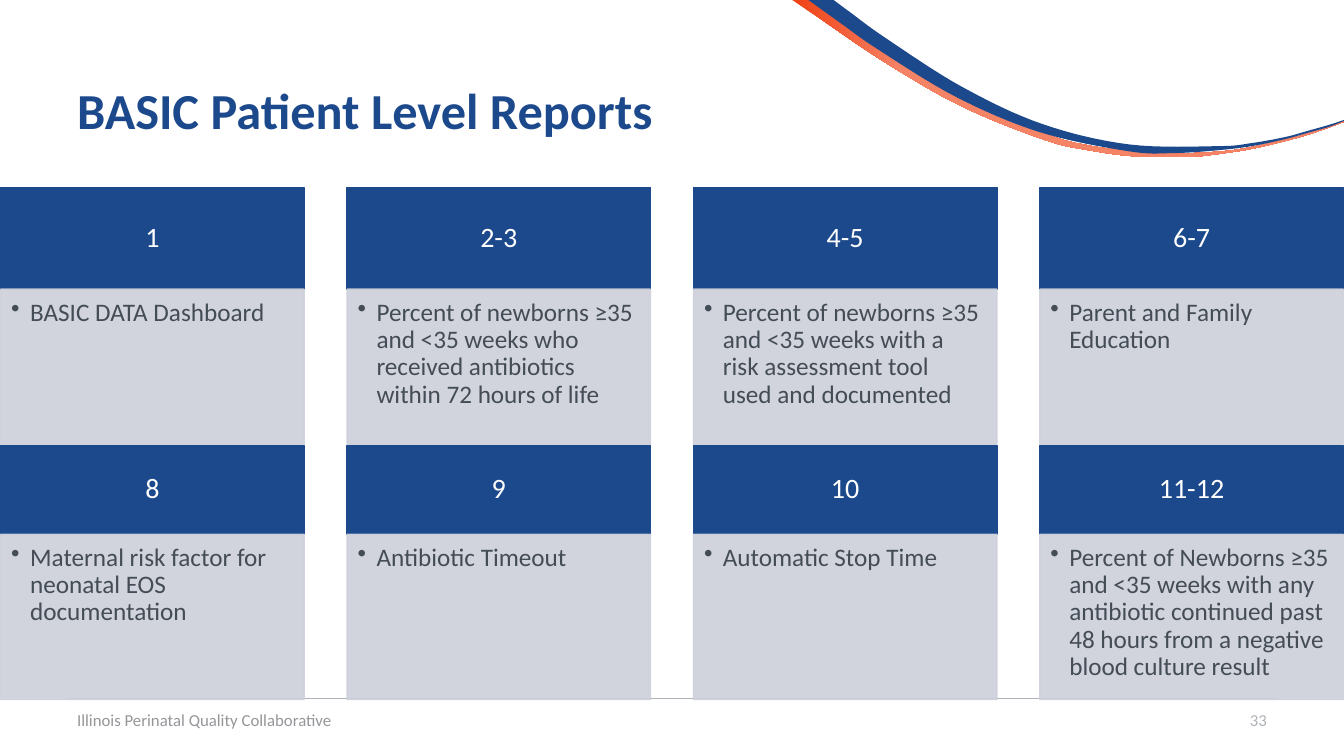
"""Build the slide of BASIC patient level reports."""
from lxml import etree
from pptx import Presentation
from pptx.dml.color import RGBColor
from pptx.enum.shapes import MSO_CONNECTOR, MSO_SHAPE
from pptx.enum.text import MSO_ANCHOR, PP_ALIGN
from pptx.oxml.ns import qn
from pptx.util import Pt

RECT = MSO_SHAPE.RECTANGLE
LINE = MSO_CONNECTOR.STRAIGHT
TOP, MID = MSO_ANCHOR.TOP, MSO_ANCHOR.MIDDLE
LEFT, CENTER, RIGHT = PP_ALIGN.LEFT, PP_ALIGN.CENTER, PP_ALIGN.RIGHT

NAVY = RGBColor(0x1C, 0x49, 0x8B)
WHITE = RGBColor(0xFF, 0xFF, 0xFF)
PALE = RGBColor(0xCD, 0xD0, 0xDA)
SLATE = RGBColor(0x44, 0x4C, 0x55)
GRAY = RGBColor(0x94, 0x96, 0x99)
SILVER = RGBColor(0xAF, 0xB3, 0xB9)
RED = RGBColor(0xF0, 0x41, 0x15)
CORAL = RGBColor(0xF5, 0x83, 0x66)

WIDE, HIGH = 960, 540
FONT = "Calibri"

ORANGE_TOP = [
    (579.6, 0), (583, 3), (635, 39), (690, 71), (748, 96), (778, 104),
    (810, 108), (841, 109.5), (868, 108.5), (889, 106), (919, 99.5),
    (935, 95), (960, 86.4)]
ORANGE_LOW = [
    (960, 87.1), (935, 96), (911, 102.5), (889, 107.3), (857.5, 111.6),
    (841.7, 112.3), (809.3, 111.6), (777.6, 107.3), (746.6, 100.1),
    (687.6, 76.3), (632.2, 44.6), (578.9, 8.6), (565.9, 0)]
BLUE_TOP = [
    (595.4, 0), (607, 8.6), (632.9, 27.4), (686.9, 61.9), (744.5, 88.6),
    (806.7, 103.2), (870.5, 104.4), (894.2, 102.2), (918, 97.9),
    (933.8, 93.6), (949, 89.3), (960, 85.7)]
BLUE_LOW = [
    (960, 86.4), (949, 90.7), (933.8, 95), (918, 99.4), (894.2, 104.4),
    (870.5, 107.3), (838, 109.4), (805.7, 108), (742.3, 94.3),
    (682.6, 69.1), (627.1, 35.3), (600.5, 16.6), (577.4, 0)]

ROWS = [
    (133.9, 72.7, 110.9, [
        ("1", "BASIC DATA Dashboard"),
        ("2-3", "Percent of newborns ≥35 and <35 weeks who received "
                "antibiotics within 72 hours of life"),
        ("4-5", "Percent of newborns ≥35 and <35 weeks with a risk "
                "assessment tool used and documented"),
        ("6-7", "Parent and Family Education")]),
    (318.2, 63.4, 118.1, [
        ("8", "Maternal risk factor for neonatal EOS documentation"),
        ("9", "Antibiotic Timeout"),
        ("10", "Automatic Stop Time"),
        ("11-12", "Percent of Newborns ≥35 and <35 weeks with any antibiotic "
                  "continued past 48 hours from a negative blood culture "
                  "result")]),
]


def smooth(knots, steps=8):
    """Return points on a Catmull-Rom curve through the knots."""
    pads = [knots[0], *knots, knots[-1]]
    dots = [knots[0]]
    for a, b, c, d in zip(pads, pads[1:], pads[2:], pads[3:]):
        for i in range(1, steps + 1):
            t = i / steps
            dots.append(tuple(
                q + t / 2 * (r - p + t * (2 * p - 5 * q + 4 * r - s
                                          + t * (3 * (q - r) + s - p)))
                for p, q, r, s in zip(a, b, c, d)))
    return dots


def add_band(slide, left, top, upper, lower):
    """Draw a closed band between two curved edges."""
    dots = [(Pt(left + x), Pt(top + y))
            for x, y in smooth(upper) + smooth(lower)]
    pen = slide.shapes.build_freeform(*dots[0])
    pen.add_line_segments(dots[1:], close=True)
    band = pen.convert_to_shape()
    band.shadow.inherit = False
    band.line.fill.background()
    return band


def add_swoosh(slide, left, top):
    """Draw the orange and blue bands in the corner."""
    fill = add_band(slide, left, top, ORANGE_TOP, ORANGE_LOW).fill
    fill.gradient()
    fill.gradient_angle = 0
    for stop, color, pos in zip(fill.gradient_stops, (RED, CORAL), (0, 0.2)):
        stop.color.rgb = color
        stop.position = pos
    fill = add_band(slide, left, top, BLUE_TOP, BLUE_LOW).fill
    fill.solid()
    fill.fore_color.rgb = NAVY


def write(shape, text, size, color, align=LEFT, anchor=MID,
          inset=(7.2, 3.6, 7.2, 3.6), bold=False, bullet=False):
    """Set one styled paragraph in a shape."""
    frame = shape.text_frame
    frame.word_wrap = True
    frame.vertical_anchor = anchor
    (frame.margin_left, frame.margin_top,
     frame.margin_right, frame.margin_bottom) = map(Pt, inset)
    para = frame.paragraphs[0]
    para.alignment = align
    para.line_spacing = 0.9
    if bullet:
        props = para._p.get_or_add_pPr()
        props.set("marL", str(Pt(13.5)))
        props.set("indent", str(-Pt(13.5)))
        etree.SubElement(props, qn("a:buChar")).set("char", "•")
    run = para.add_run()
    run.text = text
    font = run.font
    font.name, font.size, font.bold = FONT, Pt(size), bold
    font.color.rgb = color


def add_label(slide, box, text, size, color, **style):
    """Place a plain line of text in a box."""
    label = slide.shapes.add_textbox(*map(Pt, box))
    write(label, text, size, color, **style)


def add_panel(slide, box, color, alpha=100):
    """Draw a filled and outlined rectangle."""
    panel = slide.shapes.add_shape(RECT, *map(Pt, box))
    panel.shadow.inherit = False
    panel.line.width = Pt(1)
    for fill in (panel.fill, panel.line.fill):
        fill.solid()
        fill.fore_color.rgb = color
    if alpha < 100:
        for tint in panel._element.spPr.iter(qn("a:srgbClr")):
            etree.SubElement(tint, qn("a:alpha")).set("val", str(alpha * 1000))
    return panel


def add_card(slide, left, top, width, head, body, title, text):
    """Stack a numbered header on its description."""
    panel = add_panel(slide, (left, top, width, head), NAVY)
    write(panel, title, 20, WHITE, CENTER, inset=(11.5, 6.5, 11.5, 6.5))
    panel = add_panel(slide, (left, top + head, width, body), PALE, 90)
    write(panel, text, 18, SLATE, anchor=TOP,
          inset=(7.5, 7.5, 10, 11.5), bullet=True)


def add_grid(slide, left, width, card):
    """Spread the rows of cards evenly over the width."""
    for top, head, body, cards in ROWS:
        step = (width - card) / (len(cards) - 1)
        for i, (title, text) in enumerate(cards):
            add_card(slide, left + i * step, top, card, head, body,
                     title, text)


def add_rule(slide, left, top, width):
    """Draw the thin line above the footer."""
    rule = slide.shapes.add_connector(
        LINE, Pt(left), Pt(top), Pt(left + width), Pt(top))
    rule.line.color.rgb = SILVER
    rule.line.width = Pt(0.5)
    etree.SubElement(rule._element.spPr, qn("a:effectLst"))


def add_footer(slide, left, top, width, height):
    """Place the page number and the group name."""
    add_label(slide, (left + width - 216, top, 216, height), "33", 12,
              SILVER, align=RIGHT)
    add_label(slide, (left, top, 324, height),
              "Illinois Perinatal Quality Collaborative", 12, GRAY)


def main():
    """Build and save the deck."""
    deck = Presentation()
    deck.slide_width, deck.slide_height = Pt(WIDE), Pt(HIGH)
    slide = deck.slides.add_slide(deck.slide_layouts[6])
    add_swoosh(slide, 0, 0)
    add_rule(slide, 48, 499, 864)
    add_label(slide, (48, 28.8, 864, 104.4), "BASIC Patient Level Reports",
              36, NAVY, bold=True)
    add_footer(slide, 48, 500.4, 864, 28.8)
    add_grid(slide, 0.5, 959, 216.7)
    deck.save("out.pptx")


if __name__ == "__main__":
    main()
